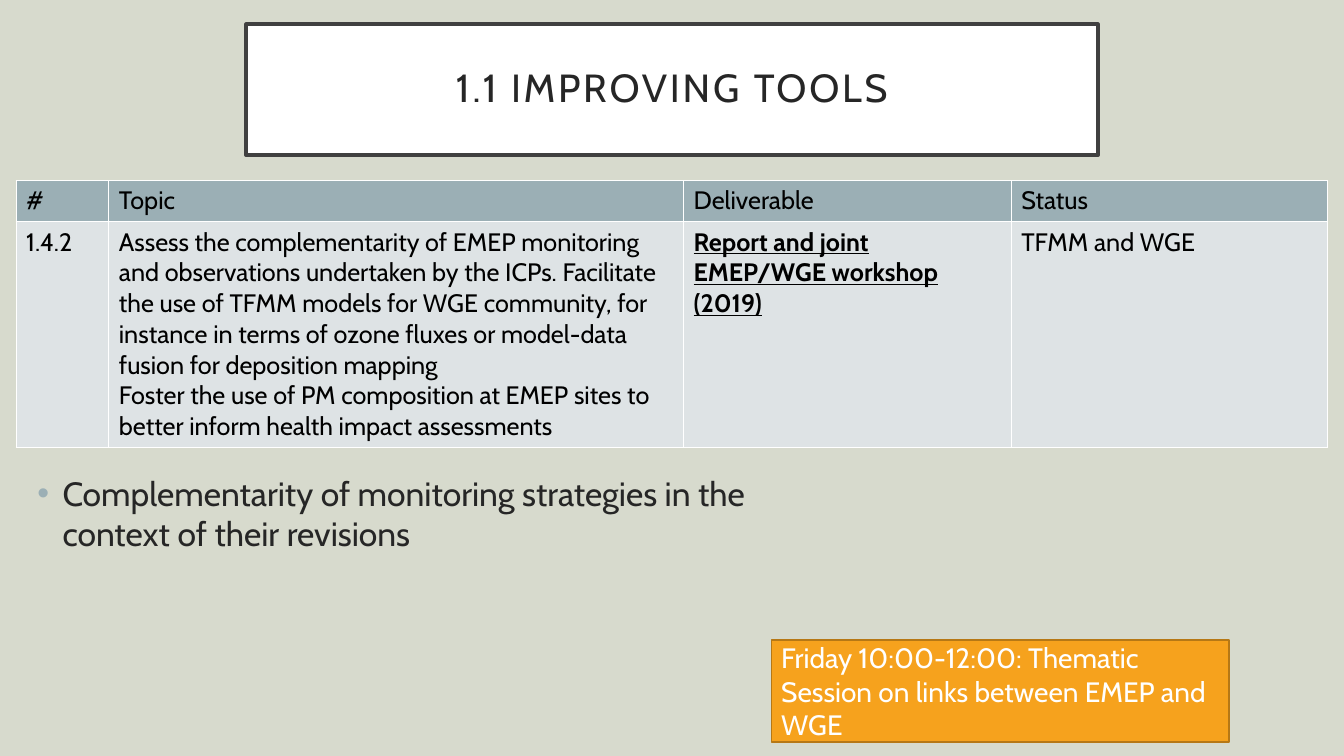
from dataclasses import dataclass

from lxml.etree import SubElement
from pptx import Presentation
from pptx.dml.color import RGBColor
from pptx.enum.shapes import MSO_SHAPE as Shape
from pptx.enum.text import MSO_ANCHOR as Anchor, MSO_AUTO_SIZE as AutoSize, PP_ALIGN as Align
from pptx.oxml.ns import qn
from pptx.util import Inches, Pt


@dataclass(frozen=True)
class Theme:
    font: str = "Cabin"
    background: str = "D7DACD"
    white: str = "FFFFFF"
    black: str = "000000"
    ink: str = "262626"
    frame: str = "404040"
    accent: str = "9BAFB5"
    row: str = "DEE3E5"
    orange: str = "F6A21D"
    orange_edge: str = "B67815"
    title_size: int = 28
    body_size: int = 24
    callout_size: int = 20
    table_size: int = 18


THEME = Theme()


def write(frame, text, *, size, color, bold=False, underline=False,
          align=Align.LEFT, anchor=Anchor.TOP, line_spacing=1.0, before=0):
    """Fill a text frame, one paragraph per line of text."""
    frame.text = text
    frame.word_wrap = True
    frame.vertical_anchor = anchor
    for para in frame.paragraphs:
        para.alignment = align
        para.line_spacing = line_spacing
        para.space_before = Pt(before)
        for span in para.runs:
            span.font.name = THEME.font
            span.font.size = Pt(size)
            span.font.color.rgb = RGBColor.from_string(color)
            span.font.bold = bold
            span.font.underline = underline


def paint(shape, fill, line, width):
    shape.fill.solid()
    shape.fill.fore_color.rgb = RGBColor.from_string(fill)
    shape.line.color.rgb = RGBColor.from_string(line)
    shape.line.width = Pt(width)


deck = Presentation()
deck.slide_width, deck.slide_height = Inches(13.33), Inches(7.5)
page = deck.slides.add_slide(deck.slide_layouts[1])
page.background.fill.solid()
page.background.fill.fore_color.rgb = RGBColor.from_string(THEME.background)

# Title
title = page.shapes.title
title.left, title.top, title.width, title.height = map(Inches, (2.44, 0.24, 8.45, 1.3))
paint(title, THEME.white, THEME.frame, 2.5)
frame = title.text_frame
frame.auto_size = AutoSize.NONE
frame.margin_left = frame.margin_right = frame.margin_top = frame.margin_bottom = Inches(0.2)
write(frame, "1.1 IMPROVING TOOLS", size=THEME.title_size, color=THEME.ink,
      align=Align.CENTER, anchor=Anchor.MIDDLE, line_spacing=0.9)
frame.paragraphs[0].runs[0].font._element.set("spc", "200")

# Work plan table
HEADER = ["#", "Topic", "Deliverable", "Status"]
ITEM = [
    "1.4.2",
    "Assess the complementarity of EMEP monitoring and observations undertaken by the ICPs. "
    "Facilitate the use of TFMM models for WGE community, for instance in terms of ozone fluxes "
    "or model-data fusion for deposition mapping\n"
    "Foster the use of PM composition at EMEP sites to better inform health impact assessments",
    "Report and joint EMEP/WGE workshop (2019)",
    "TFMM and WGE",
]
COLUMN_WIDTHS = [0.92, 5.7, 3.25, 3.14]
ROW_HEIGHTS = [0.41, 2.23]

table = page.shapes.add_table(2, 4, Inches(0.16), Inches(1.79),
                              Inches(sum(COLUMN_WIDTHS)), Inches(sum(ROW_HEIGHTS))).table
for column, width in zip(table.columns, COLUMN_WIDTHS):
    column.width = Inches(width)
for row, height in zip(table.rows, ROW_HEIGHTS):
    row.height = Inches(height)

for r, (texts, fill) in enumerate([(HEADER, THEME.accent), (ITEM, THEME.row)]):
    for c, text in enumerate(texts):
        cell = table.cell(r, c)
        strong = text.startswith("Report")
        write(cell.text_frame, text, size=THEME.table_size, color=THEME.black,
              bold=strong, underline=strong)
        cell_props = cell._tc.get_or_add_tcPr()
        for side in ("a:lnL", "a:lnR", "a:lnT", "a:lnB"):
            border = SubElement(cell_props, qn(side), w=str(Pt(1)))
            SubElement(SubElement(border, qn("a:solidFill")), qn("a:srgbClr"), val=THEME.white)
        cell.fill.solid()
        cell.fill.fore_color.rgb = RGBColor.from_string(fill)

# Bullet list
body = page.placeholders[1]
body.left, body.top, body.width, body.height = map(Inches, (0.27, 4.64, 8.3, 1.7))
body.text_frame.auto_size = AutoSize.NONE
write(body.text_frame, "Complementarity of monitoring strategies in the context of their revisions",
      size=THEME.body_size, color=THEME.ink, before=10)
bullet_props = body.text_frame.paragraphs[0]._p.get_or_add_pPr()
bullet_props.set("marL", str(Inches(0.25)))
bullet_props.set("indent", str(Inches(-0.25)))
SubElement(SubElement(bullet_props, qn("a:buClr")), qn("a:srgbClr"), val=THEME.accent)
SubElement(bullet_props, qn("a:buFont"), typeface="Arial")
SubElement(bullet_props, qn("a:buChar"), char="•")

# Session callout
callout = page.shapes.add_shape(Shape.RECTANGLE, Inches(7.65), Inches(6.35),
                                Inches(4.54), Inches(1.01))
callout.shadow.inherit = False
paint(callout, THEME.orange, THEME.orange_edge, 1)
write(callout.text_frame, "Friday 10:00-12:00: Thematic Session on links between EMEP and WGE",
      size=THEME.callout_size, color=THEME.white, anchor=Anchor.MIDDLE)

deck.save("out.pptx")
